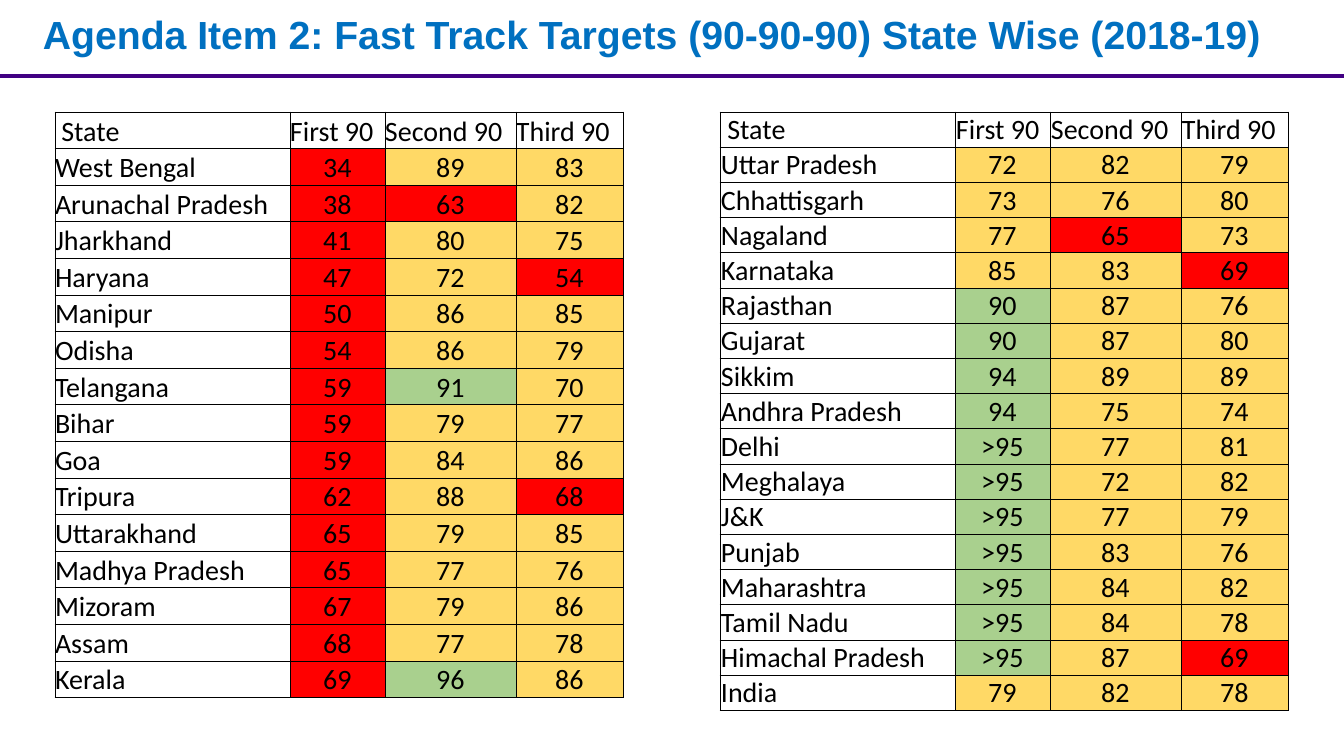
from dataclasses import dataclass

import pptx
import pptx.dml.color
import pptx.enum.shapes
import pptx.enum.text
import pptx.oxml
import pptx.oxml.ns
import pptx.slide
import pptx.table
import pptx.util

EMU_PER_INCH = 914400
PX_PER_INCH = 100.8
PAGE_WIDTH, PAGE_HEIGHT = 1344, 756
RULE_Y = 76
TABLE_TOP = 112
COLUMN_WIDTHS = (235, 95, 131, 107)
HEADINGS = ("\N{NO-BREAK SPACE}State", "First 90", "Second 90", "Third 90")
TITLE = "Agenda Item 2: Fast Track Targets (90-90-90) State Wise (2018-19)"


@dataclass(frozen=True)
class Theme:
    title_font: str = "Arial"
    title_size: int = 28
    title_colour: str = "0070C0"
    table_font: str = "Calibri"
    table_size: int = 20
    text_colour: str = "000000"
    rule_colour: str = "410082"
    rule_width: int = 3
    border_colour: str = "000000"
    border_width: float = 0.5
    low: str = "FF0000"
    middle: str = "FFD966"
    high: str = "A9D08E"


THEME = Theme()


@dataclass(frozen=True)
class StateRow:
    state: str
    first: str
    second: str
    third: str

    def values(self) -> tuple[str, ...]:
        return self.state, self.first, self.second, self.third


@dataclass(frozen=True)
class StateTable:
    left: int
    height: int
    inset: int
    rows: tuple[StateRow, ...]


TABLES = (
    StateTable(55, 586, 0, (
        StateRow("West Bengal", "34", "89", "83"),
        StateRow("Arunachal Pradesh", "38", "63", "82"),
        StateRow("Jharkhand", "41", "80", "75"),
        StateRow("Haryana", "47", "72", "54"),
        StateRow("Manipur", "50", "86", "85"),
        StateRow("Odisha", "54", "86", "79"),
        StateRow("Telangana", "59", "91", "70"),
        StateRow("Bihar", "59", "79", "77"),
        StateRow("Goa", "59", "84", "86"),
        StateRow("Tripura", "62", "88", "68"),
        StateRow("Uttarakhand", "65", "79", "85"),
        StateRow("Madhya Pradesh", "65", "77", "76"),
        StateRow("Mizoram", "67", "79", "86"),
        StateRow("Assam", "68", "77", "78"),
        StateRow("Kerala", "69", "96", "86"),
    )),
    StateTable(720, 599, 1, (
        StateRow("Uttar Pradesh", "72", "82", "79"),
        StateRow("Chhattisgarh", "73", "76", "80"),
        StateRow("Nagaland", "77", "65", "73"),
        StateRow("Karnataka", "85", "83", "69"),
        StateRow("Rajasthan", "90", "87", "76"),
        StateRow("Gujarat", "90", "87", "80"),
        StateRow("Sikkim", "94", "89", "89"),
        StateRow("Andhra Pradesh", "94", "75", "74"),
        StateRow("Delhi", ">95", "77", "81"),
        StateRow("Meghalaya", ">95", "72", "82"),
        StateRow("J&K", ">95", "77", "79"),
        StateRow("Punjab", ">95", "83", "76"),
        StateRow("Maharashtra", ">95", "84", "82"),
        StateRow("Tamil Nadu", ">95", "84", "78"),
        StateRow("Himachal Pradesh", ">95", "87", "69"),
        StateRow("India", "79", "82", "78"),
    )),
)


def px(length: int) -> pptx.util.Emu:
    return pptx.util.Emu(round(length * EMU_PER_INCH / PX_PER_INCH))


def rgb(colour: str) -> pptx.dml.color.RGBColor:
    return pptx.dml.color.RGBColor.from_string(colour)


def score_colour(score: str) -> str:
    number = int(score.lstrip(">"))
    if number < 70:
        return THEME.low
    return THEME.high if number >= 90 else THEME.middle


def draw_rule(page: pptx.slide.Slide) -> None:
    rule = page.shapes.add_connector(
        pptx.enum.shapes.MSO_CONNECTOR.STRAIGHT,
        px(0), px(RULE_Y), px(PAGE_WIDTH), px(RULE_Y))
    rule.line.color.rgb = rgb(THEME.rule_colour)
    rule.line.width = pptx.util.Pt(THEME.rule_width)
    properties = rule._element.spPr
    properties.append(pptx.oxml.parse_xml(
        f"<a:effectLst {pptx.oxml.ns.nsdecls('a')}/>"))


def draw_title(page: pptx.slide.Slide) -> None:
    box = page.shapes.add_textbox(px(33), px(8), px(1299), px(58))
    frame = box.text_frame
    frame.word_wrap = True
    frame.vertical_anchor = pptx.enum.text.MSO_ANCHOR.MIDDLE
    para = frame.paragraphs[0]
    para.text = TITLE
    para.line_spacing = 0.9
    para.font.name = THEME.title_font
    para.font.size = pptx.util.Pt(THEME.title_size)
    para.font.bold = True
    para.font.color.rgb = rgb(THEME.title_colour)


def draw_borders(cell: pptx.table._Cell) -> None:
    properties = cell._tc.get_or_add_tcPr()
    width = pptx.util.Pt(THEME.border_width)
    for side in ("lnL", "lnR", "lnT", "lnB"):
        properties.append(pptx.oxml.parse_xml(
            f'<a:{side} {pptx.oxml.ns.nsdecls("a")} w="{width}"><a:solidFill>'
            f'<a:srgbClr val="{THEME.border_colour}"/></a:solidFill></a:{side}>'))


def draw_cell(cell: pptx.table._Cell, text: str, inset: int, is_score: bool) -> None:
    cell.margin_left = cell.margin_right = cell.margin_top = px(inset)
    cell.margin_bottom = px(0)
    cell.vertical_anchor = pptx.enum.text.MSO_ANCHOR.BOTTOM
    draw_borders(cell)
    para = cell.text_frame.paragraphs[0]
    para.text = text
    para.font.name = THEME.table_font
    para.font.size = pptx.util.Pt(THEME.table_size)
    para.font.color.rgb = rgb(THEME.text_colour)
    if is_score:
        para.alignment = pptx.enum.text.PP_ALIGN.CENTER
        cell.fill.solid()
        cell.fill.fore_color.rgb = rgb(score_colour(text))
    else:
        cell.fill.background()


def draw_table(page: pptx.slide.Slide, content: StateTable) -> None:
    lines = [HEADINGS, *(row.values() for row in content.rows)]
    table = page.shapes.add_table(
        len(lines), len(HEADINGS), px(content.left), px(TABLE_TOP),
        px(sum(COLUMN_WIDTHS)), px(content.height)).table
    table.first_row = False
    table.horz_banding = False
    for column, width in zip(table.columns, COLUMN_WIDTHS):
        column.width = px(width)
    for row_index, line in enumerate(lines):
        for column_index, text in enumerate(line):
            draw_cell(table.cell(row_index, column_index), text, content.inset,
                      row_index > 0 and column_index > 0)


def main() -> None:
    deck = pptx.Presentation()
    deck.slide_width = px(PAGE_WIDTH)
    deck.slide_height = px(PAGE_HEIGHT)
    page = deck.slides.add_slide(deck.slide_layouts[6])
    draw_rule(page)
    draw_title(page)
    for content in TABLES:
        draw_table(page, content)
    deck.save("out.pptx")


if __name__ == "__main__":
    main()
